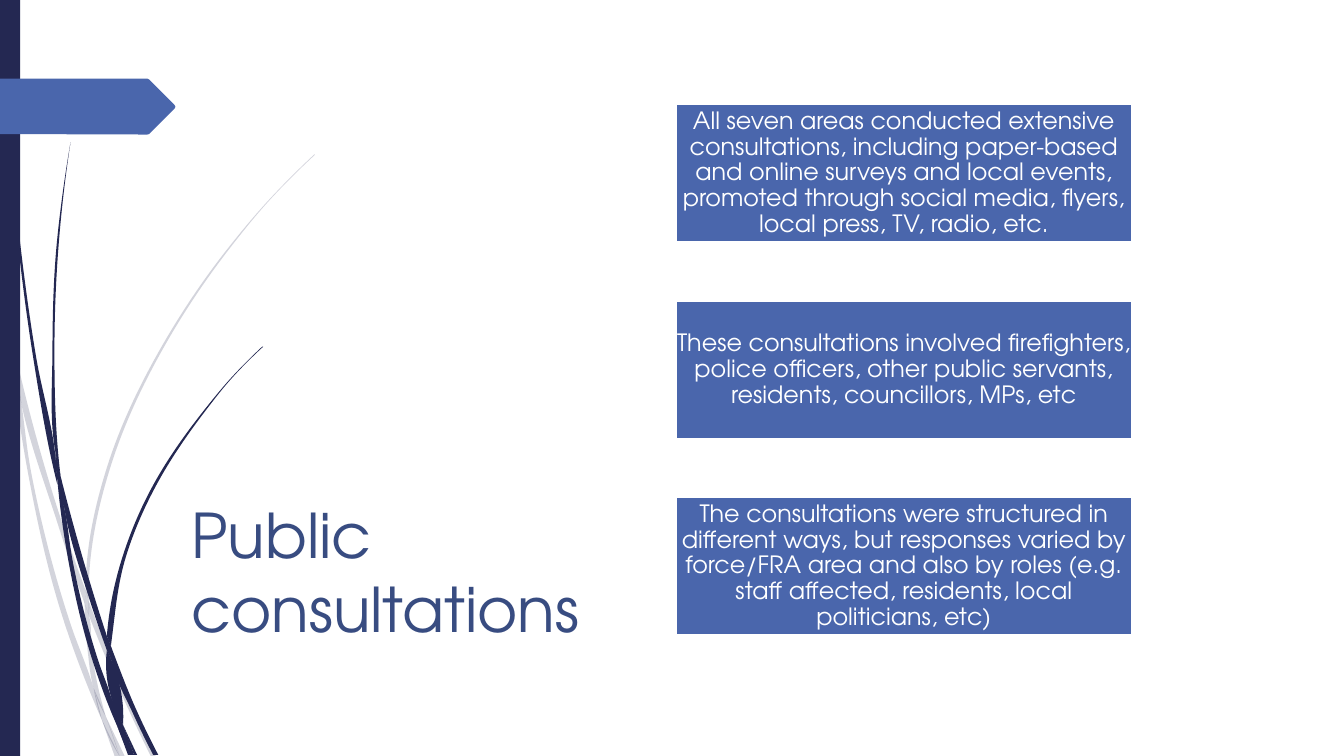
import dataclasses

import lxml.etree
import pptx
import pptx.dml.color
import pptx.enum.shapes
import pptx.enum.text
import pptx.oxml.ns
import pptx.util

Point = tuple[float, float]

COLOURS = {"navy": "242852", "blue": "4A66AC", "title": "384C81", "white": "FFFFFF"}
FONT = "TeX Gyre Adventor"

# The slide is a fine grid of 1333 columns by 750 rows, 0.01 inch each.
CELL = pptx.util.Inches(0.01)
COLUMNS, ROWS = 1333, 750


@dataclasses.dataclass(frozen=True)
class Blade:
    """A piece of grass: both edges as (column, row) knots from top to bottom."""
    left: list[Point]
    right: list[Point]


@dataclasses.dataclass(frozen=True)
class Area:
    left: float
    top: float
    width: float
    height: float

    def lengths(self) -> list[int]:
        return [cells(n) for n in (self.left, self.top, self.width, self.height)]


FAINT_BLADES = [
    Blade([(0, 299), (10, 344), (11, 350)], [(0, 282), (9, 322), (11, 350)]),
    Blade([(14, 345), (17, 376), (58, 522), (84, 599)], [(14, 345), (62, 520), (85, 586)]),
    Blade([(88, 610), (123, 694), (150, 751)], [(88, 596), (92, 607), (127, 692), (155, 751)]),
    Blade([(105, 711), (119, 751)], [(105, 711), (124, 751)]),
    Blade([(11, 350), (28, 470), (65, 621), (92, 693), (101, 714)],
          [(11, 350), (17, 376), (31, 469), (70, 619), (93, 683), (101, 714)]),
    Blade([(84, 599), (87, 646), (93, 683), (96, 692), (105, 711)],
          [(84, 599), (88, 610), (91, 646), (105, 711)]),
    Blade([(312, 153), (268, 197), (228, 244), (158, 348), (107, 461), (85, 584), (85, 586)],
          [(312, 154), (268, 198), (229, 245), (160, 349), (110, 462), (88, 584), (88, 596)]),
    Blade([(101, 714), (114, 751)], [(101, 714), (119, 751)]),
    Blade([(85, 586), (84, 599)], [(85, 586), (88, 596), (88, 610)]),
    Blade([(93, 683), (101, 714), (119, 751)], [(93, 683), (105, 711), (119, 751)]),
]
SOLID_BLADES = [
    Blade([(3, 0), (4, 48), (7, 110), (17, 233), (33, 355), (56, 477), (57, 481)],
          [(4, 0), (5, 48), (8, 109), (19, 232), (36, 355), (55, 453), (57, 481)]),
    Blade([(60, 472), (64, 505), (88, 592), (106, 645)], [(60, 472), (93, 590), (106, 631)]),
    Blade([(110, 641), (111, 656), (132, 708), (152, 749)],
          [(110, 641), (113, 649), (136, 706), (157, 749)]),
    Blade([(57, 477), (68, 557), (93, 659), (111, 708), (117, 722)],
          [(57, 477), (64, 505), (72, 556), (98, 657), (110, 691), (117, 722)]),
    Blade([(70, 141), (62, 193), (56, 245), (52, 349), (55, 449), (60, 472)],
          [(70, 141), (63, 193), (58, 245), (54, 349), (58, 453), (60, 472)]),
    Blade([(122, 719), (133, 749)], [(122, 719), (136, 749)]),
    Blade([(55, 449), (57, 477), (64, 505)], [(55, 449), (60, 472), (64, 505)]),
    Blade([(260, 344), (231, 373), (204, 405), (156, 474), (122, 551), (106, 631)],
          [(261, 344), (231, 374), (205, 406), (158, 476), (125, 552), (111, 633), (110, 641)]),
    Blade([(117, 722), (127, 749)], [(117, 722), (131, 749)]),
    Blade([(106, 645), (110, 691), (122, 719)], [(106, 645), (111, 656), (122, 719)]),
    Blade([(106, 631), (106, 645)], [(106, 631), (110, 641), (111, 656)]),
    Blade([(110, 691), (117, 722), (130, 749)], [(110, 691), (122, 719), (133, 749)]),
]

SPINE = Area(0, 0, 20, ROWS)
TAB = [(0, 78), (146, 78), (148, 79), (173, 104), (174, 106), (173, 108),
       (148, 133), (146, 133.5), (0, 133)]
TITLE = Area(180, 342, 418, 448)
FIRST_CARD = Area(670, 103, 453, 137.5)
CARD_PITCH = 195
CARDS = [
    "All seven areas conducted extensive consultations, including paper-based and online "
    "surveys and local events, promoted through social media, flyers, local press, TV, radio, etc.",
    "These consultations involved firefighters, police officers, other public servants, "
    "residents, councillors, MPs, etc",
    "The consultations were structured in different ways, but responses varied by force/FRA "
    "area and also by roles (e.g. staff affected, residents, local politicians, etc)",
]


def cells(count: float) -> int:
    return pptx.util.Emu(round(count * CELL))


def colour(name: str) -> pptx.dml.color.RGBColor:
    return pptx.dml.color.RGBColor.from_string(COLOURS[name])


def smooth_edge(knots: list[Point]) -> list[Point]:
    """Knots with two Bezier handles between each pair; slopes follow parabolas."""
    pairs = list(zip(knots, knots[1:]))
    rises = [b[1] - a[1] for a, b in pairs]
    secants = [(b[0] - a[0]) / rise for (a, b), rise in zip(pairs, rises)]
    inner = [(secants[i] * rises[i + 1] + secants[i + 1] * rises[i]) / (rises[i] + rises[i + 1])
             for i in range(len(pairs) - 1)] or secants
    slopes = [2 * secants[0] - inner[0], *inner, 2 * secants[-1] - inner[-1]]
    if len(pairs) == 1:
        slopes = secants * 2
    points = [knots[0]]
    for i, ((x0, y0), (x1, y1)) in enumerate(pairs):
        third = rises[i] / 3
        points += [(x0 + slopes[i] * third, y0 + third),
                   (x1 - slopes[i + 1] * third, y1 - third), (x1, y1)]
    return points


def paint(shape, fill: str, opacity: int = 100) -> None:
    shape.shadow.inherit = False
    shape.fill.solid()
    shape.fill.fore_color.rgb = colour(fill)
    shape.line.fill.background()
    if opacity < 100:
        rgb = next(shape._element.spPr.iter(pptx.oxml.ns.qn("a:srgbClr")))
        alpha = lxml.etree.SubElement(rgb, pptx.oxml.ns.qn("a:alpha"))
        alpha.set("val", str(opacity * 1000))


def draw_outline(page, points: list[Point]):
    corners = [(cells(x), cells(y)) for x, y in points]
    builder = page.shapes.build_freeform(*corners[0], scale=1.0)
    builder.add_line_segments(corners[1:], close=True)
    return builder.convert_to_shape()


def bend(shape) -> None:
    """Turn every three straight segments into one cubic curve."""
    lines = list(shape._element.iter(pptx.oxml.ns.qn("a:lnTo")))
    for first, second, third in zip(lines[::3], lines[1::3], lines[2::3]):
        first.tag = pptx.oxml.ns.qn("a:cubicBezTo")
        for spare in (second, third):
            first.append(spare[0])
            spare.getparent().remove(spare)


def draw_blade(page, blade: Blade, opacity: int) -> None:
    left, right = smooth_edge(blade.left), smooth_edge(blade.right)[::-1]
    foot = [left[-1], right[0]]
    shape = draw_outline(page, left + foot + right)
    bend(shape)
    paint(shape, "navy", opacity)


def draw_rectangle(page, area: Area, fill: str):
    box = page.shapes.add_shape(pptx.enum.shapes.MSO_SHAPE.RECTANGLE, *area.lengths())
    paint(box, fill)
    return box


def write(page, area: Area, text: str, size: int, ink: str):
    """Add a text box of one run, centred vertically."""
    box = page.shapes.add_textbox(*area.lengths())
    frame = box.text_frame
    frame.word_wrap = True
    frame.vertical_anchor = pptx.enum.text.MSO_ANCHOR.MIDDLE
    span = frame.paragraphs[0].add_run()
    span.text = text
    span.font.name = FONT
    span.font.size = pptx.util.Pt(size)
    span.font.color.rgb = colour(ink)
    return frame


def draw_card(page, area: Area, text: str) -> None:
    box = draw_rectangle(page, area, "blue")
    box.line.color.rgb = colour("white")
    box.line.width = pptx.util.Pt(1.75)
    frame = write(page, area, text, 17, "white")
    frame.margin_left = frame.margin_right = frame.margin_top = frame.margin_bottom = cells(1)
    para = frame.paragraphs[0]
    para.alignment = pptx.enum.text.PP_ALIGN.CENTER
    para.line_spacing = 0.9


def main() -> None:
    deck = pptx.Presentation()
    deck.slide_width, deck.slide_height = cells(COLUMNS), cells(ROWS)
    page = deck.slides.add_slide(deck.slide_layouts[6])
    for blades, opacity in ((FAINT_BLADES, 20), (SOLID_BLADES, 100)):
        for blade in blades:
            draw_blade(page, blade, opacity)
    draw_rectangle(page, SPINE, "navy")
    paint(draw_outline(page, TAB), "blue")
    write(page, TITLE, "Public consultations", 44, "title")
    for index, text in enumerate(CARDS):
        top = FIRST_CARD.top + index * CARD_PITCH
        draw_card(page, dataclasses.replace(FIRST_CARD, top=top), text)
    deck.save("out.pptx")


if __name__ == "__main__":
    main()
